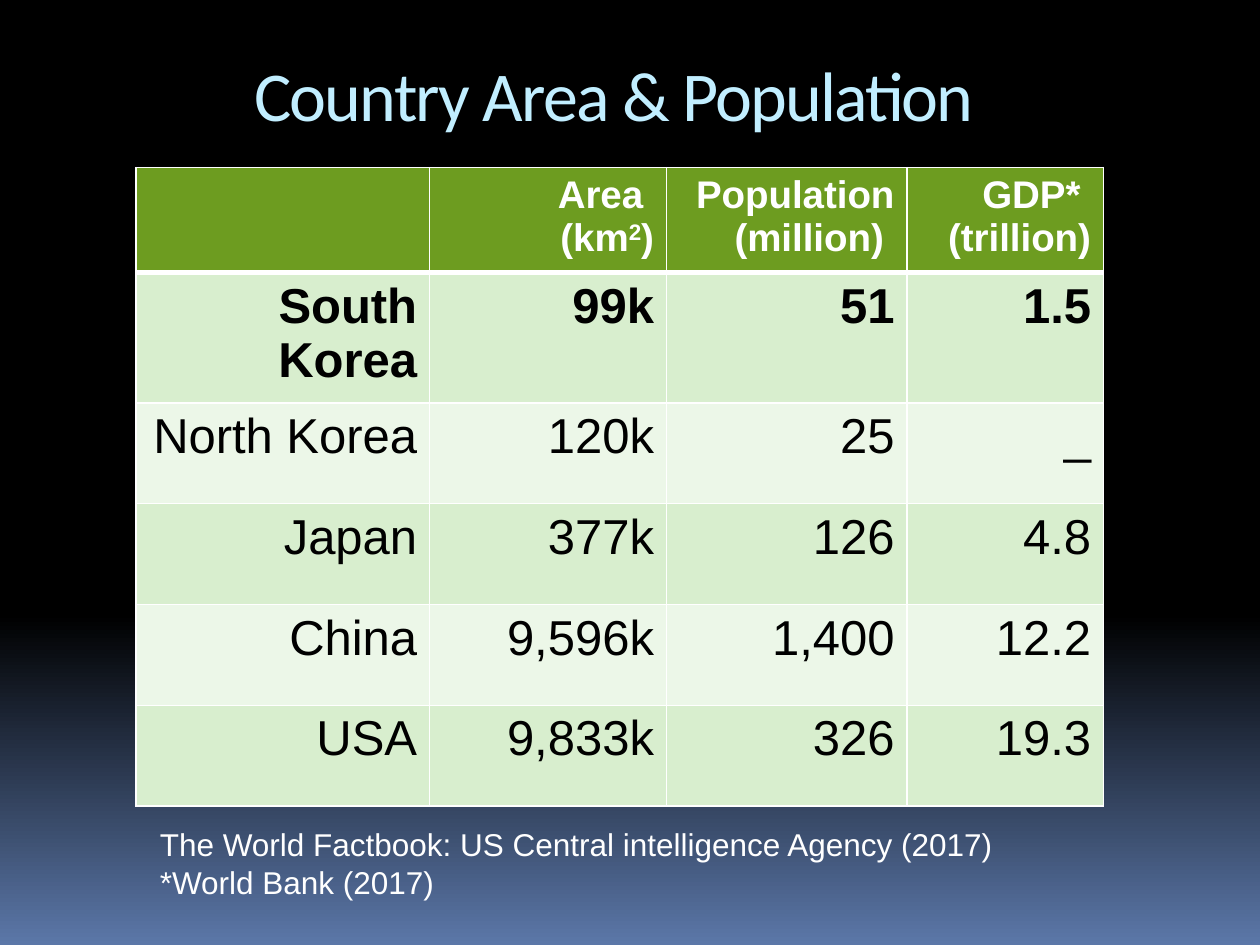
from copy import deepcopy

from lxml import etree
from pptx import Presentation
from pptx.dml.color import RGBColor
from pptx.enum.text import MSO_ANCHOR, PP_ALIGN
from pptx.oxml.ns import qn
from pptx.util import Inches, Pt

LEFT, RIGHT, TOP = PP_ALIGN.LEFT, PP_ALIGN.RIGHT, MSO_ANCHOR.TOP

BLACK = RGBColor(0x00, 0x00, 0x00)
WHITE = RGBColor(0xFF, 0xFF, 0xFF)
DUSK_BLUE = RGBColor(0x5B, 0x77, 0xA8)
PALE_BLUE = RGBColor(0xC1, 0xEE, 0xFF)
HEADER_GREEN = RGBColor(0x6D, 0x9C, 0x20)
BANDS = (RGBColor(0xD8, 0xEE, 0xCE), RGBColor(0xEC, 0xF7, 0xE8))

BACKGROUND = ((0, BLACK), (0.65, BLACK), (1, DUSK_BLUE))
TITLE = "Country Area & Population"
SOURCES = ["The World Factbook: US Central intelligence Agency (2017)",
           "*World Bank (2017)"]

# Each cell is a list of paragraphs; "^" comes before and after a superscript.
HEADER = [[], ["Area ", "(km^2^)"], ["Population (million) "], ["GDP* ", "(trillion)"]]
COUNTRIES = [
    ("South Korea", "99k", "51", "1.5"),
    ("North Korea", "120k", "25", "_"),
    ("Japan", "377k", "126", "4.8"),
    ("China", "9,596k", "1,400", "12.2"),
    ("USA", "9,833k", "326", "19.3"),
]
HIGHLIGHTED = "South Korea"
COLUMN_WIDTHS = (2.33, 1.88, 1.91, 1.56)
HEADER_HEIGHT, COUNTRY_HEIGHT = 0.38, 0.8


def write(frame, lines, size, color, font="Arial", bold=False, align=LEFT, spacing=None):
    frame.word_wrap = True
    for index, line in enumerate(lines):
        para = frame.paragraphs[0] if index == 0 else frame.add_paragraph()
        para.alignment = align
        for part, text in enumerate(line.split("^")):
            span = para.add_run()
            span.text = text
            span.font.name = font
            span.font.size = Pt(size)
            span.font.bold = bold
            span.font.color.rgb = color
            properties = span.font._element
            if part % 2:
                properties.set("baseline", "30000")
            if spacing is not None:
                properties.set("spc", str(int(spacing * 100)))


def add_text(page, lines, left, top, width, height, **text_format):
    box = page.shapes.add_textbox(Inches(left), Inches(top), Inches(width), Inches(height))
    box.text_frame.vertical_anchor = TOP
    write(box.text_frame, lines, **text_format)
    return box


def set_borders(cell, color, bottom_width):
    properties = cell._tc.get_or_add_tcPr()
    widths = {"a:lnL": 1, "a:lnR": 1, "a:lnT": 1, "a:lnB": bottom_width}
    for index, (tag, width) in enumerate(widths.items()):
        line = etree.Element(qn(tag), w=str(Pt(width)))
        fill = etree.SubElement(line, qn("a:solidFill"))
        etree.SubElement(fill, qn("a:srgbClr"), val=str(color))
        properties.insert(index, line)


def fill_background(page):
    fill = page.background.fill
    fill.gradient()
    fill.gradient_angle = 270
    first_stop = next(page.element.iter(qn("a:gs")))
    first_stop.addnext(deepcopy(first_stop))
    for stop, (position, color) in zip(fill.gradient_stops, BACKGROUND):
        stop.position = position
        stop.color.rgb = color


def add_country_table(page, left, top):
    height = HEADER_HEIGHT + COUNTRY_HEIGHT * len(COUNTRIES)
    table = page.shapes.add_table(
        len(COUNTRIES) + 1, len(COLUMN_WIDTHS), Inches(left), Inches(top),
        Inches(sum(COLUMN_WIDTHS)), Inches(height)).table
    table.horz_banding = False
    for column, width in zip(table.columns, COLUMN_WIDTHS):
        column.width = Inches(width)

    rows = [HEADER] + [[[value] for value in country] for country in COUNTRIES]
    for number, (row, values) in enumerate(zip(table.rows, rows)):
        is_header = number == 0
        row.height = Inches(HEADER_HEIGHT if is_header else COUNTRY_HEIGHT)
        bold = is_header or values[0] == [HIGHLIGHTED]
        for cell, lines in zip(row.cells, values):
            cell.fill.solid()
            cell.fill.fore_color.rgb = HEADER_GREEN if is_header else BANDS[(number - 1) % 2]
            set_borders(cell, WHITE, bottom_width=3 if is_header else 1)
            write(cell.text_frame, lines, size=22 if is_header else 28,
                  color=WHITE if is_header else BLACK, bold=bold, align=RIGHT)


def main():
    deck = Presentation()
    deck.slide_width, deck.slide_height = Inches(10), Inches(7.5)
    page = deck.slides.add_slide(deck.slide_layouts[6])
    fill_background(page)
    title = add_text(page, [TITLE], 1.92, 0.33, 6.17, 1,
                     size=40, color=PALE_BLUE, font="Calibri", spacing=-1)
    title.text_frame.margin_top = Inches(0.08)
    add_country_table(page, 1.08, 1.33)
    add_text(page, SOURCES, 1.17, 6.5, 7.75, 0.71, size=18, color=WHITE)
    deck.save("out.pptx")


if __name__ == "__main__":
    main()
